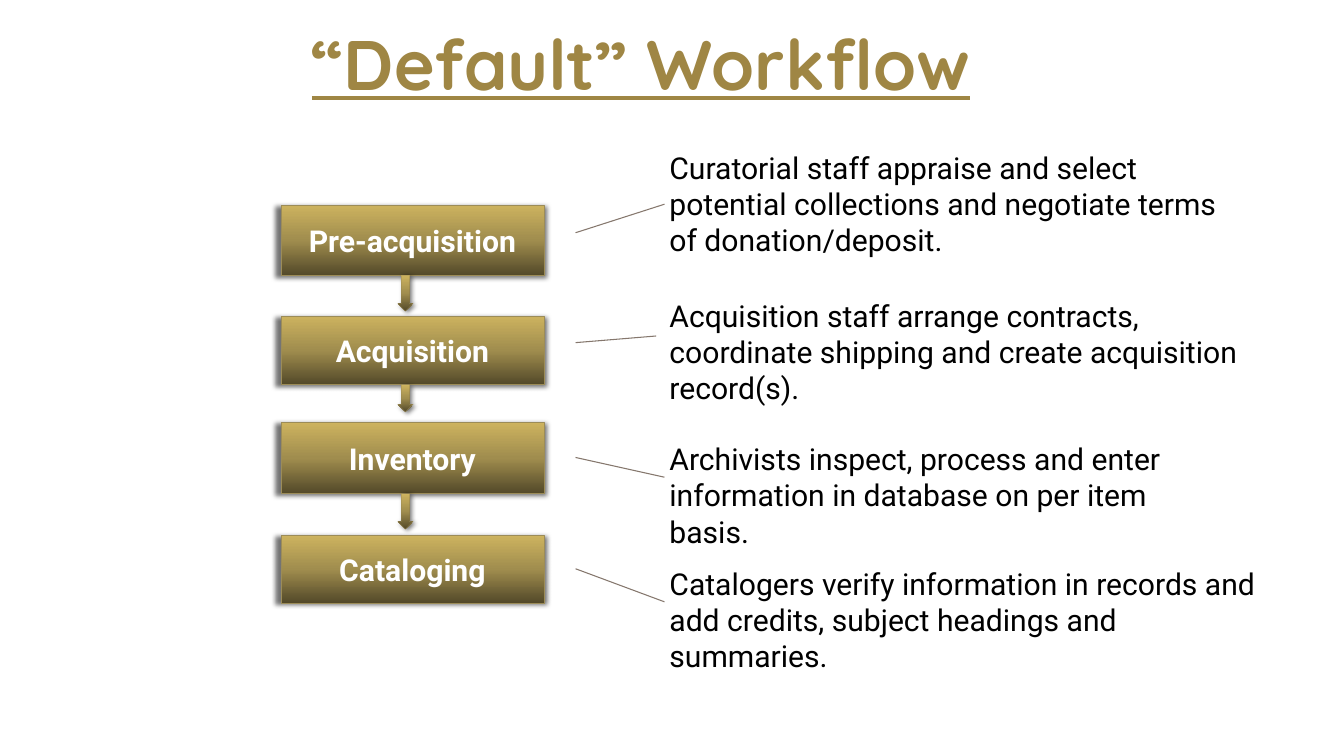
from collections import namedtuple
from dataclasses import dataclass

from lxml.etree import SubElement
from pptx import Presentation
from pptx.dml.color import RGBColor
from pptx.enum.shapes import MSO_CONNECTOR as Connector, MSO_SHAPE as Shape
from pptx.enum.text import MSO_ANCHOR as Anchor, MSO_AUTO_SIZE as AutoSize, PP_ALIGN as Align
from pptx.oxml import parse_xml
from pptx.oxml.ns import nsdecls, qn
from pptx.util import Pt

Box = namedtuple("Box", "left top width height")
Step = namedtuple("Step", "label top height arrow_height")
Note = namedtuple("Note", "text top width height pointer_start pointer_end")


@dataclass(frozen=True)
class Theme:
    title: str = "9F8644"
    text: str = "000000"
    step_text: str = "FFFFFF"
    outline: str = "9C8C58"
    pointer: str = "85776D"
    gradient: tuple = ((0, "534929"), (50, "A08D4E"), (100, "CDB35F"))
    shadow: str = "000000"
    title_font: str = "Quicksand"
    body_font: str = "Roboto"
    title_size: int = 100
    body_size: int = 43


THEME = Theme()
TITLE_FORMAT = dict(name=THEME.title_font, size=Pt(THEME.title_size), bold=True, underline=True)
STEP_FORMAT = dict(name=THEME.body_font, size=Pt(THEME.body_size), bold=True)
NOTE_FORMAT = dict(name=THEME.body_font, size=Pt(THEME.body_size), bold=False)

STEPS = [
    Step("Pre-acquisition", 0, 101, 51),
    Step("Acquisition", 158.5, 98.5, 39),
    Step("Inventory", 311, 101.5, 51),
    Step("Cataloging", 472.5, 96.5, 0),
]
NOTES = [
    Note("Curatorial staff appraise and select potential collections and negotiate "
         "terms of donation/deposit.", 0, 828, 163.5, 122.5, None),
    Note("Acquisition staff arrange contracts, coordinate shipping and create "
         "acquisition record(s).", 211, 826.5, 163.5, 279.5, (115, 270)),
    Note("Archivists inspect, process and enter information in database on per "
         "item basis.", 416, 789, 111.5, 443.5, None),
    Note("Catalogers verify information in records and add credits, subject "
         "headings and summaries.", 594, 865.5, 111.5, 602.5, None),
]


def set_attributes(target, values):
    for name, value in values.items():
        setattr(target, name, value)


def write_text(frame, text, font_format, color, alignment, anchor):
    set_attributes(frame, dict(text=text, word_wrap=True, vertical_anchor=anchor,
                               auto_size=AutoSize.NONE))
    paragraph = frame.paragraphs[0]
    paragraph.alignment = alignment
    font = paragraph.runs[0].font
    set_attributes(font, font_format)
    font.color.rgb = RGBColor.from_string(color)


def add_metal_shape(slide, kind, box):
    shape = slide.shapes.add_shape(kind, *map(Pt, box))
    shape.line.color.rgb = RGBColor.from_string(THEME.outline)
    shape.line.width = Pt(0.5)
    shape.shadow.inherit = False
    stops = "".join(
        f'<a:gs pos="{position * 1000}"><a:srgbClr val="{color}"/></a:gs>'
        for position, color in THEME.gradient
    )
    properties = shape.element.spPr
    properties.find(qn("a:prstGeom")).addnext(parse_xml(
        f'<a:gradFill {nsdecls("a")} rotWithShape="1"><a:gsLst>{stops}</a:gsLst>'
        '<a:lin ang="16200000" scaled="0"/></a:gradFill>'
    ))
    properties.find(qn("a:effectLst")).append(parse_xml(
        f'<a:outerShdw {nsdecls("a")} blurRad="{Pt(7)}" dist="{Pt(4)}" dir="2100000" '
        'sx="103000" algn="br" rotWithShape="0">'
        f'<a:srgbClr val="{THEME.shadow}"><a:alpha val="55000"/></a:srgbClr></a:outerShdw>'
    ))
    return shape


def add_title(slide, box):
    title = slide.shapes.title
    set_attributes(title, dict(zip(box._fields, map(Pt, box))))
    frame = title.text_frame
    set_attributes(frame, dict(margin_left=Pt(17.3), margin_right=Pt(17.3),
                               margin_top=Pt(8.6), margin_bottom=Pt(8.6)))
    write_text(frame, "“Default” Workflow", TITLE_FORMAT, THEME.title,
               Align.CENTER, Anchor.MIDDLE)


def add_workflow(slide, box):
    arrow_width = 22
    arrow_left = box.left + 167
    for step in STEPS:
        top = box.top + step.top
        rectangle = add_metal_shape(slide, Shape.RECTANGLE,
                                    Box(box.left, top, box.width, step.height))
        write_text(rectangle.text_frame, step.label, STEP_FORMAT, THEME.step_text,
                   Align.CENTER, Anchor.MIDDLE)
    for step in STEPS[:-1]:
        add_metal_shape(slide, Shape.DOWN_ARROW,
                        Box(arrow_left, box.top + step.top + step.height,
                            arrow_width, step.arrow_height))


def add_notes(slide, box):
    text_offset = 127
    for note in NOTES:
        text_box = slide.shapes.add_textbox(
            Pt(box.left + text_offset), Pt(box.top + note.top), Pt(note.width), Pt(note.height))
        write_text(text_box.text_frame, note.text, NOTE_FORMAT, THEME.text,
                   Align.LEFT, Anchor.TOP)
        end_x, end_y = note.pointer_end or (text_offset, note.top + note.height / 2)
        pointer = slide.shapes.add_connector(
            Connector.STRAIGHT, Pt(box.left + end_x), Pt(box.top + end_y),
            Pt(box.left), Pt(box.top + note.pointer_start))
        if note.pointer_end is None:
            pointer.begin_connect(text_box, 1)
        pointer.line.color.rgb = RGBColor.from_string(THEME.pointer)
        pointer.line.width = Pt(1.5)
        SubElement(pointer.element.spPr, qn("a:effectLst"))


def main():
    presentation = Presentation()
    presentation.slide_width = Pt(1919.5)
    presentation.slide_height = Pt(1080)
    slide = presentation.slides.add_slide(presentation.slide_layouts[5])
    add_title(slide, Box(56, 0, 1718.5, 179.5))
    add_workflow(slide, Box(401, 292.5, 376, 569))
    add_notes(slide, Box(822, 210, 992.5, 705.5))
    presentation.save("out.pptx")


if __name__ == "__main__":
    main()
